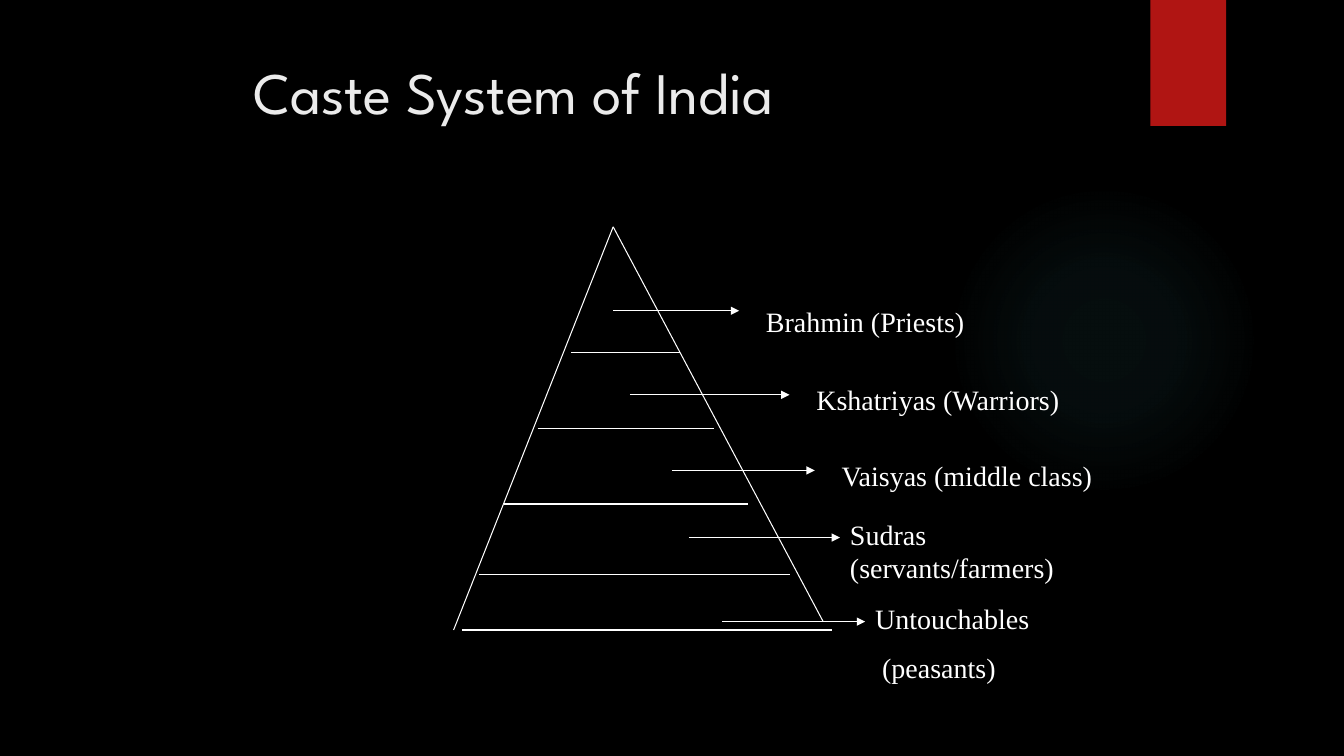
from lxml import etree
from pptx import Presentation
from pptx.dml.color import RGBColor
from pptx.enum.shapes import MSO_CONNECTOR as CONNECTOR, MSO_SHAPE as SHAPE
from pptx.enum.text import MSO_ANCHOR as ANCHOR
from pptx.oxml import parse_xml
from pptx.oxml.ns import nsdecls, qn
from pptx.util import Pt

WHITE = "FFFFFF"
TITLE = {"name": "League Spartan", "size": Pt(42)}
LABEL = {"name": "Times New Roman", "size": Pt(20)}

# Pyramid lines: x1, y1, x2, y2
SIDES = [(324, 450, 438, 162), (438, 162, 588, 444)]
LEVELS = [(408, 252, 468, 252), (444, 252, 486, 252), (384, 306, 510, 306),
          (360, 360, 534, 360), (342, 410.4, 564, 410.4), (330, 450, 594, 450)]

# Arrow start x, end x, y; label left, top, width, height; label lines
CASTES = [
    ((438, 528, 222), (540, 198, 210, 50.4), ["Brahmin (Priests)"]),
    ((450, 564, 282), (576, 270, 210, 31), ["Kshatriyas (Warriors)"]),
    ((480, 582, 336), (594, 324, 204, 31), ["Vaisyas (middle class)"]),
    ((492, 600, 384), (600, 366, 198, 91.4), ["Sudras (servants/farmers)"]),
    ((516, 618, 444), (618, 426, 168, 67), ["Untouchables", " (peasants)"]),
]


def color(value):
    return RGBColor.from_string(value)


def add_line(slide, x1, y1, x2, y2, arrow=False):
    line = slide.shapes.add_connector(CONNECTOR.STRAIGHT, Pt(x1), Pt(y1), Pt(x2), Pt(y2))
    line.line.color.rgb = color(WHITE)
    line.line.width = Pt(0.75)
    properties = line._element.spPr
    if arrow:
        head = etree.SubElement(properties.find(qn("a:ln")), qn("a:tailEnd"))
        head.set("type", "triangle")
    etree.SubElement(properties, qn("a:effectLst"))


def add_text(slide, box, lines, font_format, ink):
    frame = slide.shapes.add_textbox(*map(Pt, box)).text_frame
    frame.word_wrap = True
    frame.vertical_anchor = ANCHOR.TOP
    for index, words in enumerate(lines):
        paragraph = frame.add_paragraph() if index else frame.paragraphs[0]
        if index:
            paragraph.space_before = Pt(11)
        add_run(paragraph, words, font_format, ink)
    return frame


def add_run(paragraph, words, font_format, ink):
    run = paragraph.add_run()
    run.text = words
    for name, value in font_format.items():
        setattr(run.font, name, value)
    run.font.color.rgb = color(ink)


def add_block(slide, kind, box, fill):
    block = slide.shapes.add_shape(kind, *map(Pt, box))
    block.shadow.inherit = False
    block.fill.solid()
    block.fill.fore_color.rgb = color(fill)
    block.line.fill.background()
    return block


def add_glow(slide, box, tint, stops):
    """Add a circle that fades outwards; stops are (position, opacity) in percent."""
    glow = add_block(slide, SHAPE.OVAL, box, tint)
    stop_xml = "".join(
        f'<a:gs pos="{position * 1000}"><a:srgbClr val="{tint}">'
        f'<a:alpha val="{opacity * 1000}"/></a:srgbClr></a:gs>'
        for position, opacity in stops)
    gradient = parse_xml(
        f'<a:gradFill {nsdecls("a")} rotWithShape="1"><a:gsLst>{stop_xml}</a:gsLst>'
        '<a:path path="circle"><a:fillToRect l="50000" t="50000" r="50000" b="50000"/>'
        '</a:path></a:gradFill>')
    properties = glow._element.spPr
    properties.replace(properties.find(qn("a:solidFill")), gradient)


def main():
    deck = Presentation()
    deck.slide_width, deck.slide_height = Pt(960), Pt(540)
    slide = deck.slides.add_slide(deck.slide_layouts[6])
    slide.background.fill.solid()
    slide.background.fill.fore_color.rgb = color("000000")

    add_glow(slide, (677.5, 131.8, 221.8, 221.8), "50B9C1", [(0, 7), (36, 6), (69, 0)])
    add_block(slide, SHAPE.RECTANGLE, (821.8, 0, 54, 90), "B01513")
    add_text(slide, (174, 36, 612, 90), ["Caste System of India"], TITLE, "EBEBEB")

    for ends in SIDES + LEVELS:
        add_line(slide, *ends)
    for (start, end, y), box, lines in CASTES:
        add_line(slide, start, y, end, y, arrow=True)
        label = add_text(slide, box, lines, LABEL, WHITE)
        if lines == ["Brahmin (Priests)"]:
            add_run(label.paragraphs[0], " ", {**LABEL, "size": Pt(36)}, WHITE)

    deck.save("out.pptx")


if __name__ == "__main__":
    main()
